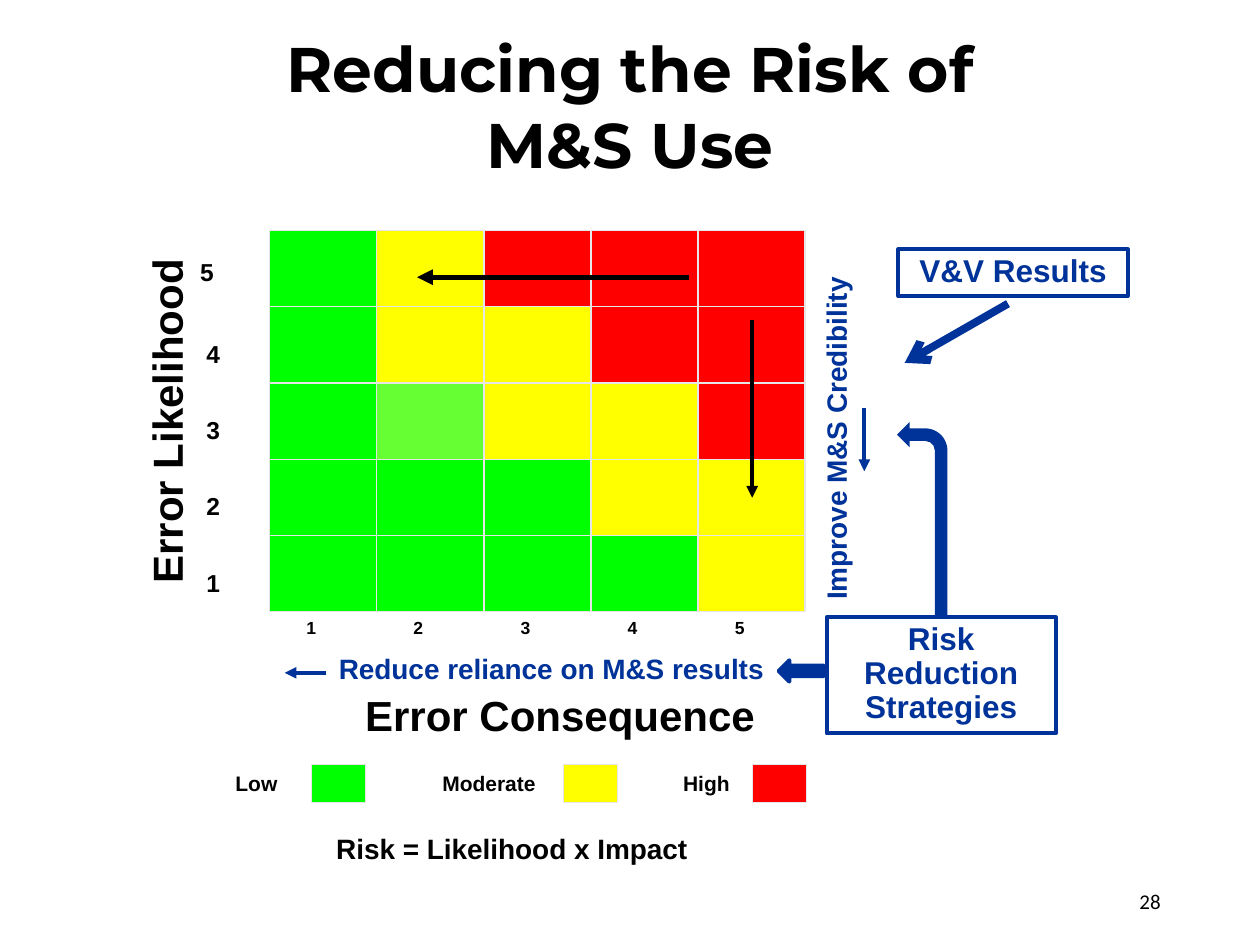
from dataclasses import dataclass

from lxml import etree
from pptx import Presentation
from pptx.dml.color import RGBColor
from pptx.enum.shapes import MSO_CONNECTOR, MSO_SHAPE as SHAPE
from pptx.enum.text import MSO_ANCHOR as ANCHOR, PP_ALIGN as ALIGN
from pptx.oxml.ns import qn
from pptx.util import Inches, Pt


@dataclass(frozen=True)
class Theme:
    black: str = "000000"
    blue: str = "003399"
    grid: str = "E7E6E6"
    font: str = "Arial"
    title_font: str = "Montserrat"
    number_font: str = "Calibri"
    title: int = 36
    axis: int = 24
    box: int = 18
    note: int = 16
    row: int = 14
    legend: int = 12
    column: int = 10


T = Theme()
RISK = {"L": "00FF00", "l": "66FF33", "M": "FFFF00", "H": "FF0000"}

TITLE = "Reducing the Risk of\vM&S Use"
MATRIX = ["LMHHH", "LMMHH", "LlMMH", "LLLMM", "LLLLM"]
GRID_LEFT, GRID_TOP, CELL_W, CELL_H = 2.14, 1.83, 0.85, 0.605

# likelihood, left, top
ROW_LABELS = [("5", 1.49, 1.99)] + [
    (str(4 - i), 1.54, 2.64 + i * CELL_H) for i in range(4)]

# label, right edge of label, left of swatch, risk level
LEGEND = [("Low", 2.3, 2.47, "L"), ("Moderate", 4.35, 4.47, "M"), ("High", 5.89, 5.97, "H")]

# text, (left, top, width, height), size, colour, rotation
CAPTIONS = [
    ("Error Consequence", (2.8, 5.42, 3.33, 0.5), T.axis, T.black, 0),
    ("Error Likelihood", (-0.08, 3.08, 2.8, 0.5), T.axis, T.black, 270),
    ("Reduce reliance on M&S results", (2.59, 5.12, 3.72, 0.37), T.note, T.blue, 0),
    ("Improve M&S Credibility", (5.18, 3.22, 2.91, 0.37), T.note, T.blue, 270),
    ("Risk = Likelihood x Impact", (2.57, 6.55, 3, 0.37), T.note, T.black, 0),
]

# from, to, colour, width in points, arrowhead
ARROWS = [
    ((5.47, 2.2), (3.31, 2.2), T.black, 3, "triangle"),
    ((5.97, 2.54), (5.97, 3.95), T.black, 2.25, "triangle"),
    ((2.59, 5.34), (2.26, 5.34), T.blue, 2.25, "triangle"),
    ((6.86, 3.24), (6.86, 3.74), T.blue, 2.25, "triangle"),
    ((8, 2.41), (7.18, 2.88), T.blue, 4.5, "arrow"),
]

CALLOUTS = [
    (["Risk Reduction", "Strategies"], (6.56, 4.9, 1.82, 0.92)),
    (["V&V Results"], (7.13, 1.98, 1.82, 0.37)),
]


def rgb(color):
    return RGBColor.from_string(color)


def inches(box):
    return [Inches(v) for v in box]


def write(tf, lines, size, color=T.black, align=ALIGN.LEFT, font=T.font, bold=True, spacing=None):
    tf.word_wrap = True
    for i, line in enumerate(lines):
        p = tf.add_paragraph() if i else tf.paragraphs[0]
        p.text = line
        p.alignment = align
        if spacing:
            p.line_spacing = spacing
        p.font.name, p.font.size, p.font.bold = font, Pt(size), bold
        p.font.color.rgb = rgb(color)


def add_text(slide, text, box, size, color=T.black, rotation=0, **style):
    sp = slide.shapes.add_textbox(*inches(box))
    sp.rotation = rotation
    write(sp.text_frame, [text], size, color, **style)
    return sp


def add_block(slide, kind, box, fill=None, line=None, width=0.75):
    sp = slide.shapes.add_shape(kind, *inches(box))
    sp.shadow.inherit = False
    if fill:
        sp.fill.solid()
        sp.fill.fore_color.rgb = rgb(fill)
    else:
        sp.fill.background()
    if line:
        sp.line.color.rgb = rgb(line)
        sp.line.width = Pt(width)
    else:
        sp.line.fill.background()
    return sp


def add_arrow(slide, start, end, color, width, head):
    cx = slide.shapes.add_connector(MSO_CONNECTOR.STRAIGHT, *inches(start + end))
    cx.line.color.rgb = rgb(color)
    cx.line.width = Pt(width)
    etree.SubElement(cx.line._get_or_add_ln(), qn("a:tailEnd"), type=head)
    etree.SubElement(cx._element.spPr, qn("a:effectLst"))


def add_title(slide):
    sp = slide.shapes.title
    sp.left, sp.top, sp.width, sp.height = inches((0.69, 0.18, 8.62, 1.31))
    sp.text_frame.vertical_anchor = ANCHOR.MIDDLE
    write(sp.text_frame, [TITLE], T.title, align=ALIGN.CENTER, font=T.title_font)


def add_matrix(slide):
    for r, levels in enumerate(MATRIX):
        for c, level in enumerate(levels):
            box = (GRID_LEFT + c * CELL_W, GRID_TOP + r * CELL_H, CELL_W, CELL_H)
            add_block(slide, SHAPE.RECTANGLE, box, RISK[level], T.grid)
    for text, left, top in ROW_LABELS:
        add_text(slide, text, (left, top, 0.36, 0.33), T.row)
    for c in range(len(MATRIX[0])):
        box = (GRID_LEFT + 0.17 + c * CELL_W, 4.85, 0.32, 0.27)
        add_text(slide, str(c + 1), box, T.column, align=ALIGN.CENTER)


def add_legend(slide):
    label_w, top, height = 1.04, 6.07, 0.3
    for text, right, left, level in LEGEND:
        add_text(slide, text, (right - label_w, top, label_w, height), T.legend, align=ALIGN.RIGHT)
        add_block(slide, SHAPE.RECTANGLE, (left, top, 0.43, height), RISK[level], T.grid)


def add_callouts(slide):
    for lines, box in CALLOUTS:
        sp = add_block(slide, SHAPE.RECTANGLE, box, line=T.blue, width=2.25)
        sp.text_frame.vertical_anchor = ANCHOR.TOP
        write(sp.text_frame, lines, T.box, T.blue, ALIGN.CENTER, spacing=0.9)
    bent = add_block(slide, SHAPE.BENT_ARROW, (7.12, 3.35, 0.4, 1.53), T.blue)
    bent.adjustments[3] = 0.44
    bent._element.spPr.xfrm.set("flipH", "1")
    add_block(slide, SHAPE.LEFT_ARROW, (6.18, 5.24, 0.36, 0.17), T.blue, T.blue, 2.25)


def main():
    prs = Presentation()
    prs.slide_width, prs.slide_height = Inches(10), Inches(7.5)
    slide = prs.slides.add_slide(prs.slide_layouts[5])
    add_title(slide)
    add_legend(slide)
    add_matrix(slide)
    for caption in CAPTIONS:
        add_text(slide, *caption)
    add_callouts(slide)
    for arrow in ARROWS:
        add_arrow(slide, *arrow)
    number = add_text(slide, "28", (7.06, 6.95, 2.25, 0.4), T.legend,
                      align=ALIGN.RIGHT, font=T.number_font, bold=False)
    number.text_frame.vertical_anchor = ANCHOR.MIDDLE
    prs.save("out.pptx")


if __name__ == "__main__":
    main()
